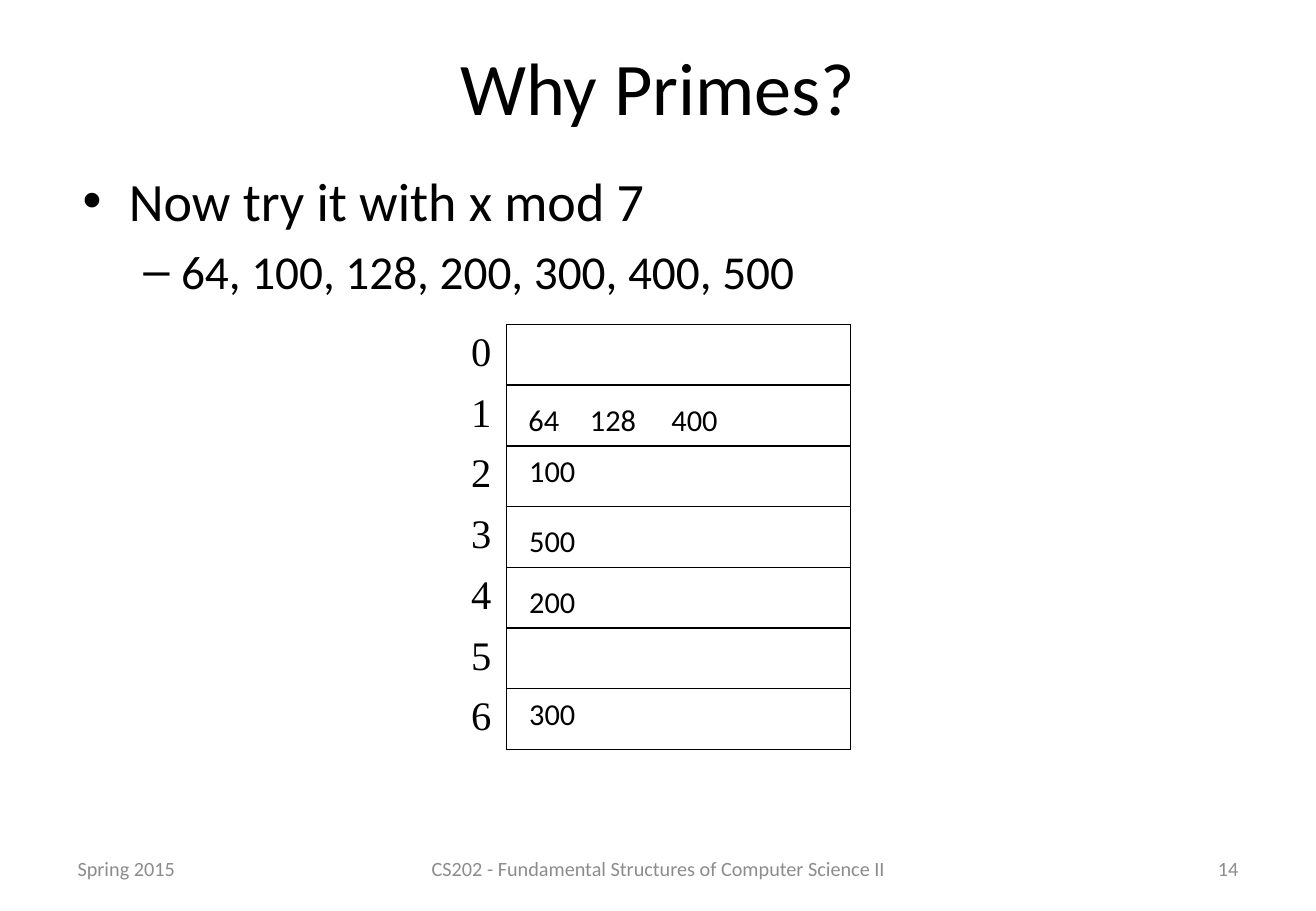
from dataclasses import dataclass

from lxml import etree
from pptx import Presentation
from pptx.dml.color import RGBColor
from pptx.enum.text import MSO_ANCHOR, MSO_AUTO_SIZE, PP_ALIGN
from pptx.oxml.ns import qn
from pptx.util import Inches, Pt

LEFT, CENTER, RIGHT = PP_ALIGN.LEFT, PP_ALIGN.CENTER, PP_ALIGN.RIGHT
TOP, MIDDLE = MSO_ANCHOR.TOP, MSO_ANCHOR.MIDDLE
NO_AUTOSIZE, FIT_SHAPE = MSO_AUTO_SIZE.NONE, MSO_AUTO_SIZE.SHAPE_TO_FIT_TEXT


@dataclass(frozen=True)
class Theme:
    font: str = "Calibri"
    table_font: str = "Times New Roman"
    ink: str = "000000"
    muted: str = "8C8C8C"
    title_size: int = 44
    list_sizes: tuple = (32, 28)
    label_size: int = 24
    key_size: int = 18
    footer_size: int = 12
    border_width: int = 1


def write_text(paragraph, text, *, font, size, color, align=LEFT):
    paragraph.alignment = align
    run = paragraph.add_run()
    run.text = text
    run.font.name = font
    run.font.size = Pt(size)
    run.font.color.rgb = RGBColor.from_string(color)


def set_bullet(paragraph, character, margin, indent):
    properties = paragraph._p.get_or_add_pPr()
    properties.set("marL", str(Inches(margin)))
    properties.set("indent", str(Inches(indent)))
    etree.SubElement(properties, qn("a:buFont"), typeface="Arial")
    etree.SubElement(properties, qn("a:buChar"), char=character)


def set_borders(cell, sides, color, width):
    """Draw the given sides, named in the order L, R, T, B."""
    properties = cell._tc.get_or_add_tcPr()
    for side in sides:
        line = etree.SubElement(properties, qn(f"a:ln{side}"), w=str(Pt(width)))
        fill = etree.SubElement(line, qn("a:solidFill"))
        etree.SubElement(fill, qn("a:srgbClr"), val=color)


def place(shape, left, top, width, height):
    shape.left, shape.top = Inches(left), Inches(top)
    shape.width, shape.height = Inches(width), Inches(height)


class SlideBuilder:
    def __init__(self, slide, theme):
        self.slide = slide
        self.theme = theme

    def title(self, text, *box):
        shape = self.slide.shapes.title
        place(shape, *box)
        shape.text_frame.vertical_anchor = MIDDLE
        write_text(shape.text_frame.paragraphs[0], text, font=self.theme.font,
                   size=self.theme.title_size, color=self.theme.ink, align=CENTER)

    def bullets(self, items, *box):
        """Fill the body with (level, text) items."""
        shape = self.slide.placeholders[1]
        place(shape, *box)
        frame = shape.text_frame
        frame.auto_size = NO_AUTOSIZE
        styles = (("•", 0.38, -0.38), ("–", 0.81, -0.31))
        for index, (level, text) in enumerate(items):
            paragraph = frame.add_paragraph() if index else frame.paragraphs[0]
            paragraph.level = level
            write_text(paragraph, text, font=self.theme.font,
                       size=self.theme.list_sizes[level], color=self.theme.ink)
            set_bullet(paragraph, *styles[level])

    def text_box(self, text, *box, size, color, align=CENTER, anchor=TOP,
                 wrap=True, auto_size=NO_AUTOSIZE):
        shape = self.slide.shapes.add_textbox(*map(Inches, box))
        frame = shape.text_frame
        frame.word_wrap = wrap
        frame.auto_size = auto_size
        frame.vertical_anchor = anchor
        write_text(frame.paragraphs[0], text, font=self.theme.font, size=size,
                   color=color, align=align)

    def footer(self, text, left, width, align):
        self.text_box(text, left, 6.95, width, 0.4, size=self.theme.footer_size,
                      color=self.theme.muted, align=align, anchor=MIDDLE)

    def hash_table(self, bucket_count, left, top, column_widths, row_height):
        theme = self.theme
        table = self.slide.shapes.add_table(
            bucket_count, 2, Inches(left), Inches(top),
            Inches(sum(column_widths)), Inches(bucket_count * row_height)).table
        table.first_row = table.horz_banding = False
        for column, width in zip(table.columns, column_widths):
            column.width = Inches(width)
        for index in range(bucket_count):
            label, bucket = table.cell(index, 0), table.cell(index, 1)
            write_text(label.text_frame.paragraphs[0], str(index),
                       font=theme.table_font, size=theme.label_size,
                       color=theme.ink, align=CENTER)
            for cell, sides in ((label, "R"), (bucket, "LRTB")):
                set_borders(cell, sides, theme.ink, theme.border_width)
                cell.fill.background()

    def key(self, text, left, top):
        width = 0.17 + 0.14 * len(text)
        self.text_box(text, left, top, width, 0.4, size=self.theme.key_size,
                      color=self.theme.ink, wrap=False, auto_size=FIT_SHAPE)


def main():
    presentation = Presentation()
    presentation.slide_width, presentation.slide_height = Inches(10.83), Inches(7.5)
    slide = presentation.slides.add_slide(presentation.slide_layouts[1])
    builder = SlideBuilder(slide, Theme())

    builder.title("Why Primes?", 0.54, 0.25, 9.75, 0.92)
    builder.bullets([(0, "Now try it with x mod 7"),
                     (1, "64, 100, 128, 200, 300, 400, 500")],
                    0.58, 1.33, 9.75, 1.25)
    builder.footer("Spring 2015", 0.54, 2.53, LEFT)
    builder.footer("CS202 - Fundamental Structures of Computer Science II",
                   3.42, 4, CENTER)
    builder.footer("14", 7.76, 2.53, RIGHT)

    builder.hash_table(7, 3.75, 2.67, (0.42, 2.83), 0.5)
    for text, left, top in (("64", 4.25, 3.25), ("128", 4.75, 3.25),
                            ("400", 5.42, 3.25), ("100", 4.25, 3.67),
                            ("500", 4.25, 4.25), ("200", 4.25, 4.75),
                            ("300", 4.25, 5.67)):
        builder.key(text, left, top)

    presentation.save("out.pptx")


if __name__ == "__main__":
    main()
